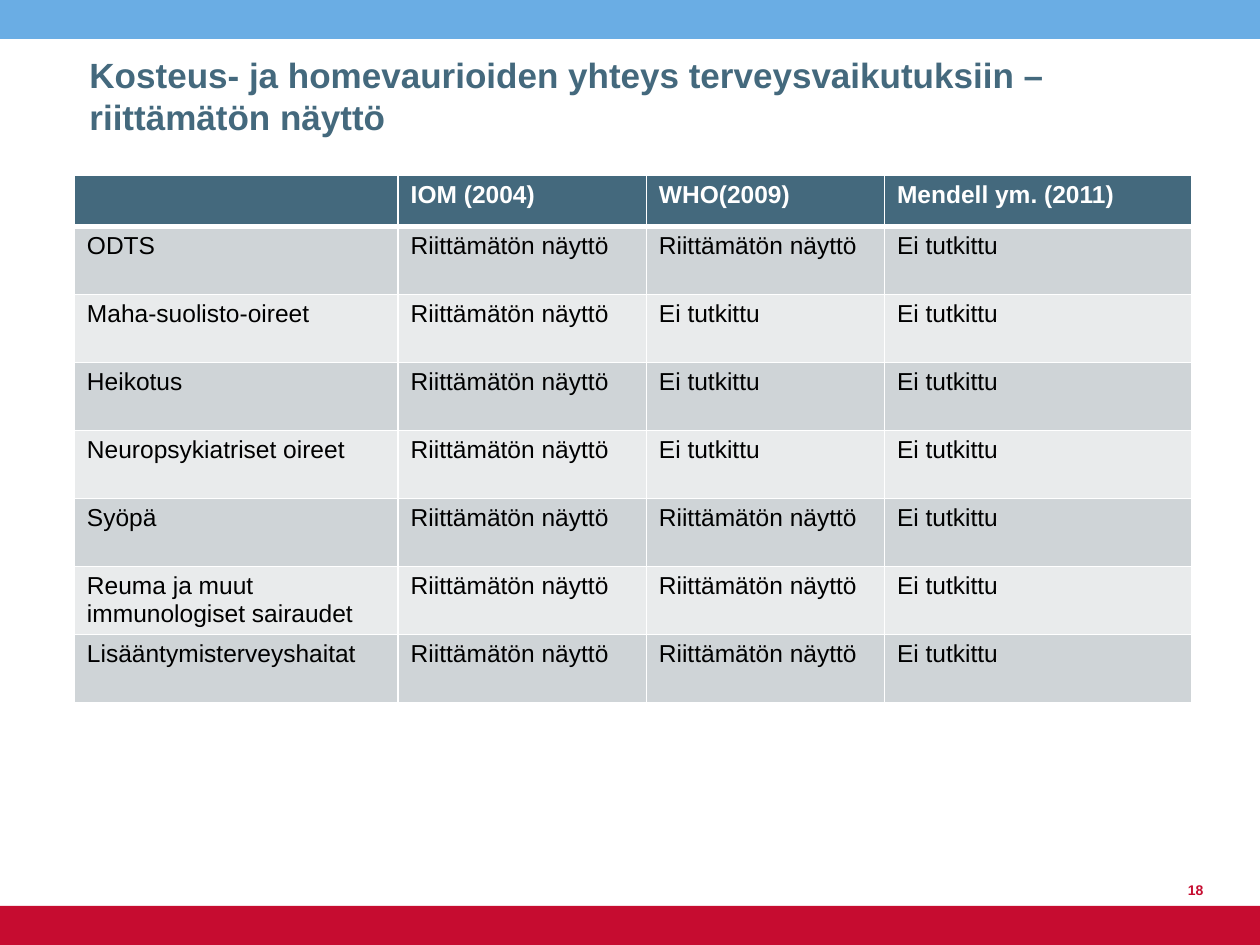
from lxml import etree
from pptx import Presentation
from pptx.dml.color import RGBColor
from pptx.enum.shapes import MSO_SHAPE
from pptx.enum.text import MSO_ANCHOR, MSO_AUTO_SIZE, PP_ALIGN
from pptx.oxml.ns import qn
from pptx.util import Inches, Pt

RECTANGLE = MSO_SHAPE.RECTANGLE
BOTTOM = MSO_ANCHOR.BOTTOM
NO_AUTOFIT = MSO_AUTO_SIZE.NONE
LEFT, RIGHT = PP_ALIGN.LEFT, PP_ALIGN.RIGHT
TITLE_ONLY = 5

COLORS = {
    "sky": "6AADE4",
    "red": "C60C30",
    "slate": "44697D",
    "band_dark": "CFD4D7",
    "band_light": "E9EBEC",
    "white": "FFFFFF",
    "black": "000000",
}

INSUFFICIENT = "Riittämätön näyttö"
NOT_STUDIED = "Ei tutkittu"
EVIDENCE_ROWS = [
    ["", "IOM (2004)", "WHO(2009)", "Mendell ym. (2011)"],
    ["ODTS", INSUFFICIENT, INSUFFICIENT, NOT_STUDIED],
    ["Maha-suolisto-oireet", INSUFFICIENT, NOT_STUDIED, NOT_STUDIED],
    ["Heikotus", INSUFFICIENT, NOT_STUDIED, NOT_STUDIED],
    ["Neuropsykiatriset oireet", INSUFFICIENT, NOT_STUDIED, NOT_STUDIED],
    ["Syöpä", INSUFFICIENT, INSUFFICIENT, NOT_STUDIED],
    ["Reuma ja muut immunologiset sairaudet", INSUFFICIENT, INSUFFICIENT, NOT_STUDIED],
    ["Lisääntymisterveyshaitat", INSUFFICIENT, INSUFFICIENT, NOT_STUDIED],
]
COLUMN_WIDTHS = [2.57, 1.97, 1.89, 2.44]
HEADER_HEIGHT, BODY_HEIGHT = 0.4, 0.54


def rgb(name):
    return RGBColor.from_string(COLORS[name])


def write_text(text_frame, text, size, color, bold=False, align=LEFT):
    paragraph = text_frame.paragraphs[0]
    paragraph.alignment = align
    if not text:
        return
    run = paragraph.add_run()
    run.text = text
    run.font.name = "Arial"
    run.font.size = Pt(size)
    run.font.bold = bold
    run.font.color.rgb = rgb(color)


def set_borders(cell, top=1, bottom=1):
    """Draw white lines around a cell; widths are in points."""
    properties = cell._tc.get_or_add_tcPr()
    sides = [("lnL", 1), ("lnR", 1), ("lnT", top), ("lnB", bottom)]
    for position, (side, width) in enumerate(sides):
        line = etree.Element(qn(f"a:{side}"), w=str(Pt(width)))
        fill = etree.SubElement(line, qn("a:solidFill"))
        etree.SubElement(fill, qn("a:srgbClr"), val=COLORS["white"])
        properties.insert(position, line)


class SlideBuilder:
    def __init__(self, slide):
        self.slide = slide

    def bar(self, top, color):
        shape = self.slide.shapes.add_shape(
            RECTANGLE, 0, Inches(top), Inches(10), Inches(0.31))
        shape.shadow.inherit = False
        shape.fill.solid()
        shape.fill.fore_color.rgb = rgb(color)
        shape.line.fill.background()

    def title(self, text):
        title = self.slide.shapes.title
        title.left, title.top = Inches(0.61), Inches(0.4)
        title.width, title.height = Inches(8.98), Inches(0.74)
        frame = title.text_frame
        frame.word_wrap = True
        frame.auto_size = NO_AUTOFIT
        frame.vertical_anchor = BOTTOM
        write_text(frame, text, size=20, color="slate", bold=True)

    def table(self, left, top, rows):
        height = HEADER_HEIGHT + BODY_HEIGHT * (len(rows) - 1)
        table = self.slide.shapes.add_table(
            len(rows), len(COLUMN_WIDTHS), Inches(left), Inches(top),
            Inches(sum(COLUMN_WIDTHS)), Inches(height)).table
        for column, width in zip(table.columns, COLUMN_WIDTHS):
            column.width = Inches(width)
        for row_index, texts in enumerate(rows):
            header = row_index == 0
            table.rows[row_index].height = Inches(HEADER_HEIGHT if header else BODY_HEIGHT)
            band = "band_dark" if row_index % 2 else "band_light"
            for column_index, text in enumerate(texts):
                cell = table.cell(row_index, column_index)
                cell.fill.solid()
                cell.fill.fore_color.rgb = rgb("slate" if header else band)
                set_borders(cell, top=3 if row_index == 1 else 1, bottom=3 if header else 1)
                write_text(cell.text_frame, text, size=14,
                           color="white" if header else "black", bold=header)

    def page_number(self, text):
        box = self.slide.shapes.add_textbox(
            Inches(9.1), Inches(6.78), Inches(0.55), Inches(0.4))
        box.text_frame.word_wrap = True
        box.text_frame.vertical_anchor = BOTTOM
        write_text(box.text_frame, text, size=8, color="red", bold=True, align=RIGHT)


def main():
    presentation = Presentation()
    presentation.slide_width = Inches(10)
    presentation.slide_height = Inches(7.5)
    slide = presentation.slides.add_slide(presentation.slide_layouts[TITLE_ONLY])
    builder = SlideBuilder(slide)
    builder.bar(0, "sky")
    builder.bar(7.19, "red")
    builder.table(0.59, 1.39, EVIDENCE_ROWS)
    builder.title("Kosteus- ja homevaurioiden yhteys terveysvaikutuksiin – riittämätön näyttö")
    builder.page_number("18")
    presentation.save("out.pptx")


if __name__ == "__main__":
    main()
